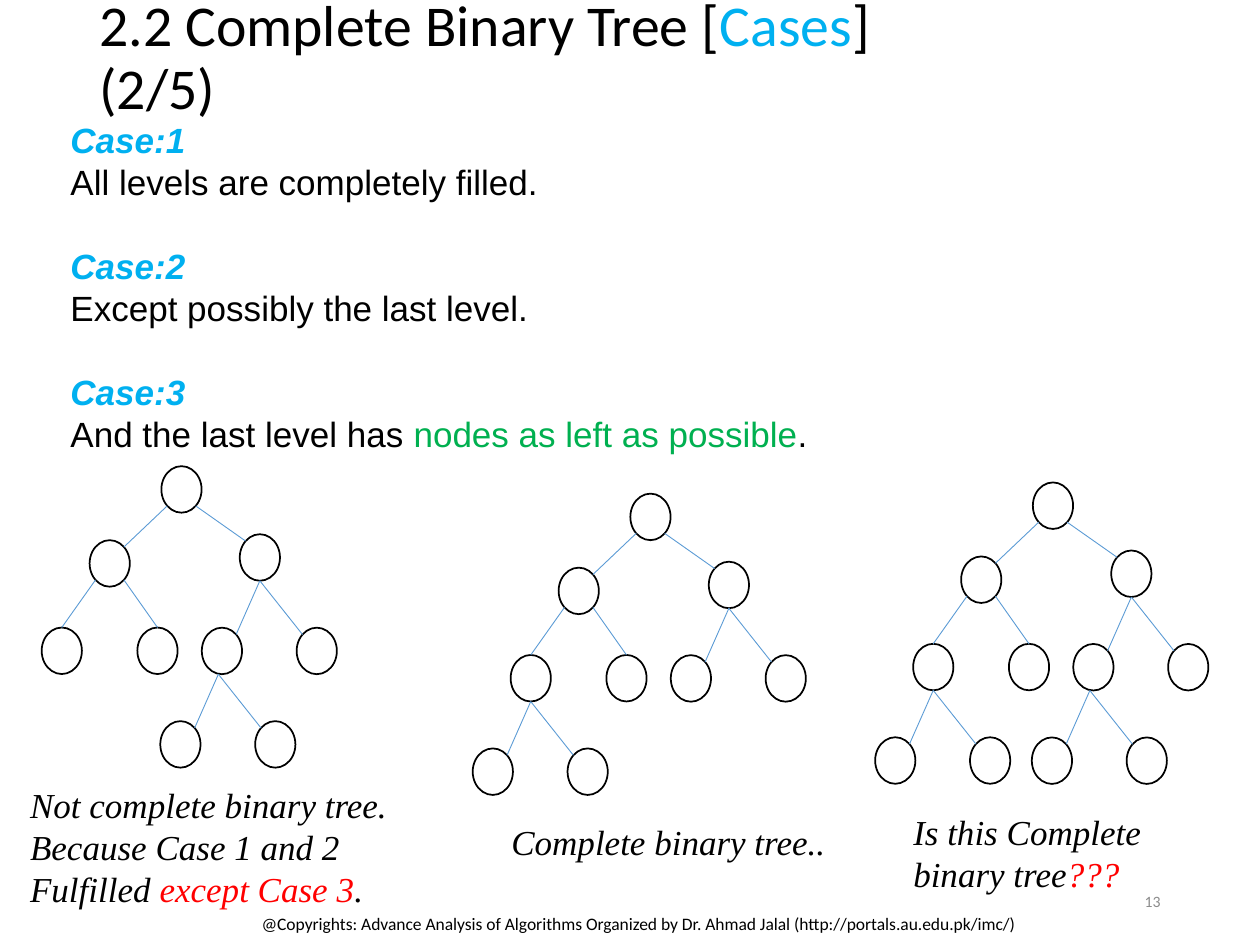
import pptx
import pptx.util
import pptx.dml.color
import pptx.enum.shapes
import pptx.enum.text
import pptx.oxml.ns
import lxml.etree

Pt = pptx.util.Pt
ALIGN = pptx.enum.text.PP_ALIGN
ANCHOR = pptx.enum.text.MSO_ANCHOR
COLORS = {"black": "000000", "white": "FFFFFF", "blue": "00B0F0",
          "green": "00B050", "red": "FF0000", "gray": "8C8C8C",
          "edge": "5B9BD5"}
RGB = {name: pptx.dml.color.RGBColor.from_string(h) for name, h in COLORS.items()}

prs = pptx.Presentation()
prs.slide_width, prs.slide_height = Pt(720), Pt(540)
s = prs.slides.add_slide(prs.slide_layouts[6])


def add_text(box, paragraphs, font, size, spacing=None, italic=False,
             align=ALIGN.LEFT, anchor=ANCHOR.TOP):
    """Each paragraph is a list of (text, colour) runs."""
    tf = s.shapes.add_textbox(*map(Pt, box)).text_frame
    tf.word_wrap = True
    tf.vertical_anchor = anchor
    for i, runs in enumerate(paragraphs):
        p = tf.paragraphs[0] if i == 0 else tf.add_paragraph()
        p.alignment = align
        p.font.name, p.font.size, p.font.italic = font, Pt(size), italic
        if spacing:
            p.line_spacing = spacing
        for text, color in runs:
            # A line break inside a run is written as a vertical tab
            for j, line in enumerate(text.split("\v")):
                if j:
                    p.add_line_break()
                r = p.add_run()
                r.text = line
                r.font.color.rgb = RGB[color]
    return tf


# Title
add_text((49.7, 2.2, 620.6, 63.4),
         [[("2.2 Complete Binary Tree [", "black"), ("Cases", "blue"),
           ("]\v(2/5)", "black")]],
         "Calibri", 33, spacing=0.9, anchor=ANCHOR.MIDDLE)

# The three cases: a heading and a sentence each
cases = [
    [("All levels are completely filled.", "black")],
    [("Except possibly the last level.", "black")],
    [("And the last level has ", "black"),
     ("nodes as left as possible", "green"), (".", "black")],
]
paragraphs = []
for number, sentence in enumerate(cases, 1):
    paragraphs += [[(f"Case:{number}", "blue")], sentence]
tf = add_text((33.2, 64.1, 568.8, 200.9), paragraphs, "Arial", 20, spacing=Pt(24))
for i, p in enumerate(tf.paragraphs[::2]):
    p.font.bold = p.font.italic = True
    if i:
        p.space_before = Pt(24)

# Tree geometry, relative to the root's top left corner
NODE_W, NODE_H = 23, 26.6
FORK_LEFT, FORK_RIGHT, FORK_DROP = -33.2, 21, 53.4
DIAGONAL = 0.5 ** 0.5 / 2
ANCHORS = {"top": (0.5, 0), "bottom": (0.5, 1),
           "tl": (0.5 - DIAGONAL, 0.5 - DIAGONAL), "tr": (0.5 + DIAGONAL, 0.5 - DIAGONAL),
           "bl": (0.5 - DIAGONAL, 0.5 + DIAGONAL), "br": (0.5 + DIAGONAL, 0.5 + DIAGONAL)}
TOP_NODES = {"root": (0, 0), "L": (-41, 42.3), "R": (44.8, 38.9),
             "LL": (-68.4, 92.2), "LR": (-13.7, 92.2)}
TOP_EDGES = [("root", "bl", "L", "tr"), ("root", "br", "R", "tl"),
             ("L", "bl", "LL", "top"), ("L", "br", "LR", "top")]
FORK_SHIFT = {"R": 0, "LL": 0, "RL": -2}

# Root position and the nodes whose two children hang from one point
trees = [((92.2, 266.4), ["R", "RL"]),
         ((360.2, 282.1), ["R", "LL"]),
         ((590.2, 275.7), ["R", "LL", "RL"])]

for (root_x, root_y), forks in trees:
    nodes = {name: (root_x + x, root_y + y) for name, (x, y) in TOP_NODES.items()}
    edges = [(a, a_side, b, b_side, 0) for a, a_side, b, b_side in TOP_EDGES]
    for parent in forks:
        shift = FORK_SHIFT[parent]
        x, y = nodes[parent]
        nodes[parent + "L"] = (x + shift + FORK_LEFT + NODE_W / 2 - 11.5, y + FORK_DROP)
        nodes[parent + "R"] = (x + shift + FORK_RIGHT + NODE_W / 2 - 11.5, y + FORK_DROP)
        for child in "LR":
            nodes[parent + child] = (x + shift + NODE_W / 2
                                     + (FORK_LEFT if child == "L" else FORK_RIGHT),
                                     y + FORK_DROP)
            side = "tr" if child == "L" else "tl"
            edges.append((parent, "bottom", parent + child, side, shift))

    for x, y in nodes.values():
        sp = s.shapes.add_shape(pptx.enum.shapes.MSO_SHAPE.OVAL,
                                Pt(x), Pt(y), Pt(NODE_W), Pt(NODE_H))
        sp.shadow.inherit = False
        sp.fill.solid()
        sp.fill.fore_color.rgb = RGB["white"]
        sp.line.color.rgb = RGB["black"]
        sp.line.width = Pt(1)

    for a, a_side, b, b_side, shift in edges:
        ends = []
        for name, side in ((a, a_side), (b, b_side)):
            ends += [nodes[name][0] + ANCHORS[side][0] * NODE_W,
                     nodes[name][1] + ANCHORS[side][1] * NODE_H]
        ends[0] += shift
        line = s.shapes.add_connector(pptx.enum.shapes.MSO_CONNECTOR.STRAIGHT,
                                      *map(Pt, ends))
        line.line.color.rgb = RGB["edge"]
        line.line.width = Pt(0.5)
        lxml.etree.SubElement(line._element.spPr, pptx.oxml.ns.qn("a:effectLst"))

# Captions under the trees
captions = [
    ((10.1, 444.2, 260.6, 79.9),
     [("Not complete binary tree. Because Case 1 and 2 Fulfilled ", "black"),
      ("except Case 3", "red"), (".", "black")]),
    ((285.1, 465.1, 196, 31.7), [("Complete binary tree..", "black")]),
    ((514.8, 459.4, 196, 55.4),
     [("Is this Complete binary tree", "black"), ("???", "red")]),
]
for box, runs in captions:
    add_text(box, [runs], "Times New Roman", 20, spacing=Pt(24), italic=True)

# Slide number and footer
add_text((508.3, 500.4, 162, 28.8), [[("13", "gray")]], "Calibri", 9,
         align=ALIGN.RIGHT, anchor=ANCHOR.MIDDLE)
add_text((121, 518.4, 487.4, 21.6),
         [[("@Copyrights: Advance Analysis of Algorithms Organized by "
            "Dr. Ahmad Jalal (http://portals.au.edu.pk/imc/)", "black")]],
         "Calibri", 10, align=ALIGN.CENTER)

prs.save("out.pptx")
